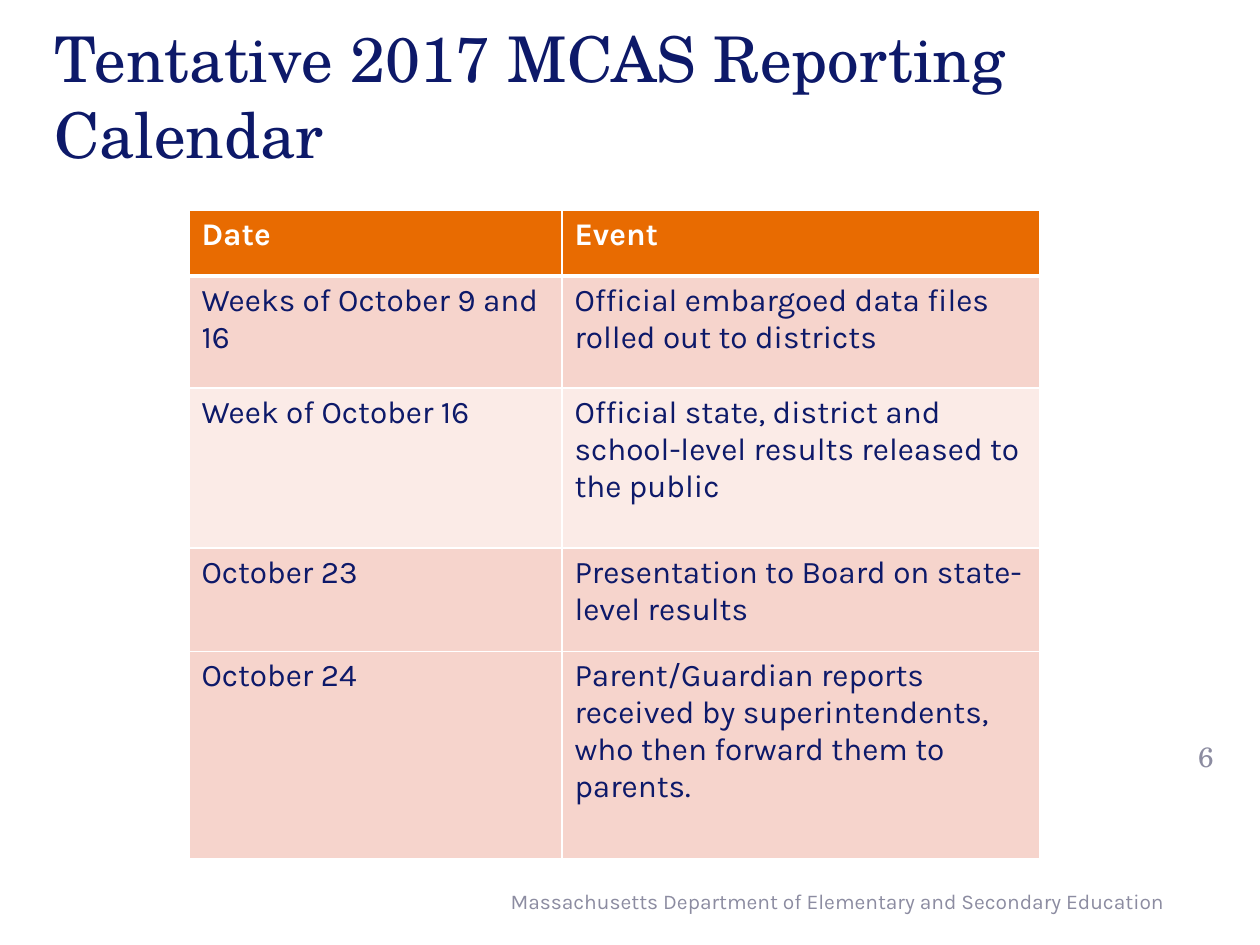
from lxml.etree import SubElement
from pptx import Presentation
from pptx.dml.color import RGBColor
from pptx.enum.text import MSO_ANCHOR as Anchor, MSO_AUTO_SIZE as AutoSize, PP_ALIGN as Align
from pptx.oxml.ns import qn
from pptx.util import Inches, Pt

NAVY = RGBColor(0x0D, 0x19, 0x69)
GRAY = RGBColor(0x8C, 0x8C, 0xA1)
WHITE = RGBColor(0xFF, 0xFF, 0xFF)
ORANGE = RGBColor(0xE8, 0x6B, 0x01)
ROSE = RGBColor(0xF6, 0xD4, 0xCC)
PALE_ROSE = RGBColor(0xFB, 0xEB, 0xE7)

CALENDAR = [
    ("Date", "Event"),
    ("Weeks of October 9 and 16", "Official embargoed data files rolled out to districts"),
    ("Week of October 16",
     "Official state, district and school-level results released to the public"),
    ("October 23", "Presentation to Board on state-level results"),
    ("October 24",
     "Parent/Guardian reports received by superintendents, who then forward them to parents."),
]
COLUMN_WIDTHS = [2.96, 3.79]
ROW_HEIGHTS = [0.52, 0.89, 1.27, 0.82, 1.65]
ROW_FILLS = [ORANGE, ROSE, PALE_ROSE, ROSE, ROSE]


class SlideBuilder:
    heading_font = "TeX Gyre Schola"
    body_font = "Karla"

    def __init__(self, page):
        self.page = page

    def set_text(self, frame, text, font, size, color, align=Align.LEFT, bold=False):
        frame.word_wrap = True
        para = frame.paragraphs[0]
        para.text = text
        para.alignment = align
        para.font.name = font
        para.font.size = Pt(size)
        para.font.color.rgb = color
        para.font.bold = bold

    def title(self, text, left, top, width, height):
        box = self.page.shapes.title
        box.left, box.top = Inches(left), Inches(top)
        box.width, box.height = Inches(width), Inches(height)
        box.text_frame.auto_size = AutoSize.NONE
        box.text_frame.vertical_anchor = Anchor.MIDDLE
        self.set_text(box.text_frame, text, self.heading_font, 36, NAVY)

    def label(self, text, area, font, size, align):
        box = self.page.shapes.add_textbox(*map(Inches, area))
        box.text_frame.vertical_anchor = Anchor.MIDDLE
        self.set_text(box.text_frame, text, font, size, GRAY, align)

    def borders(self, cell, bottom, top):
        """Draw white cell borders; the side borders are 1 pt wide."""
        properties = cell._tc.get_or_add_tcPr()
        sides = {"a:lnL": 1, "a:lnR": 1, "a:lnT": top, "a:lnB": bottom}
        for position, (tag, width) in enumerate(sides.items()):
            line = SubElement(properties, qn(tag), w=str(Pt(width)))
            fill = SubElement(line, qn("a:solidFill"))
            SubElement(fill, qn("a:srgbClr"), val=str(WHITE))
            properties.insert(position, line)

    def table(self, rows, left, top, widths, heights, fills):
        frame = self.page.shapes.add_table(
            len(rows), len(widths), Inches(left), Inches(top),
            Inches(sum(widths)), Inches(sum(heights)))
        table = frame.table
        for column, width in zip(table.columns, widths):
            column.width = Inches(width)
        for index, (row, height) in enumerate(zip(table.rows, heights)):
            row.height = Inches(height)
            header = index == 0
            for cell, text in zip(row.cells, rows[index]):
                cell.fill.solid()
                cell.fill.fore_color.rgb = fills[index]
                self.borders(cell, bottom=3 if header else 1, top=3 if index == 1 else 1)
                self.set_text(cell.text_frame, text, self.body_font, 18,
                              WHITE if header else NAVY, bold=header)


def main():
    deck = Presentation()
    deck.slide_width, deck.slide_height = Inches(10), Inches(7.5)
    page = deck.slides.add_slide(deck.slide_layouts.get_by_name("Title Only"))
    builder = SlideBuilder(page)
    builder.title("Tentative 2017 MCAS Reporting Calendar", 0.33, 0.34, 9.5, 0.83)
    builder.table(CALENDAR, 1.5, 1.67, COLUMN_WIDTHS, ROW_HEIGHTS, ROW_FILLS)
    builder.label("Massachusetts Department of Elementary and Secondary Education",
                  (3.42, 6.95, 5.92, 0.4), builder.body_font, 12, Align.RIGHT)
    builder.label("6", (9.28, 5.75, 0.58, 0.5), builder.heading_font, 16, Align.CENTER)
    deck.save("out.pptx")


if __name__ == "__main__":
    main()
